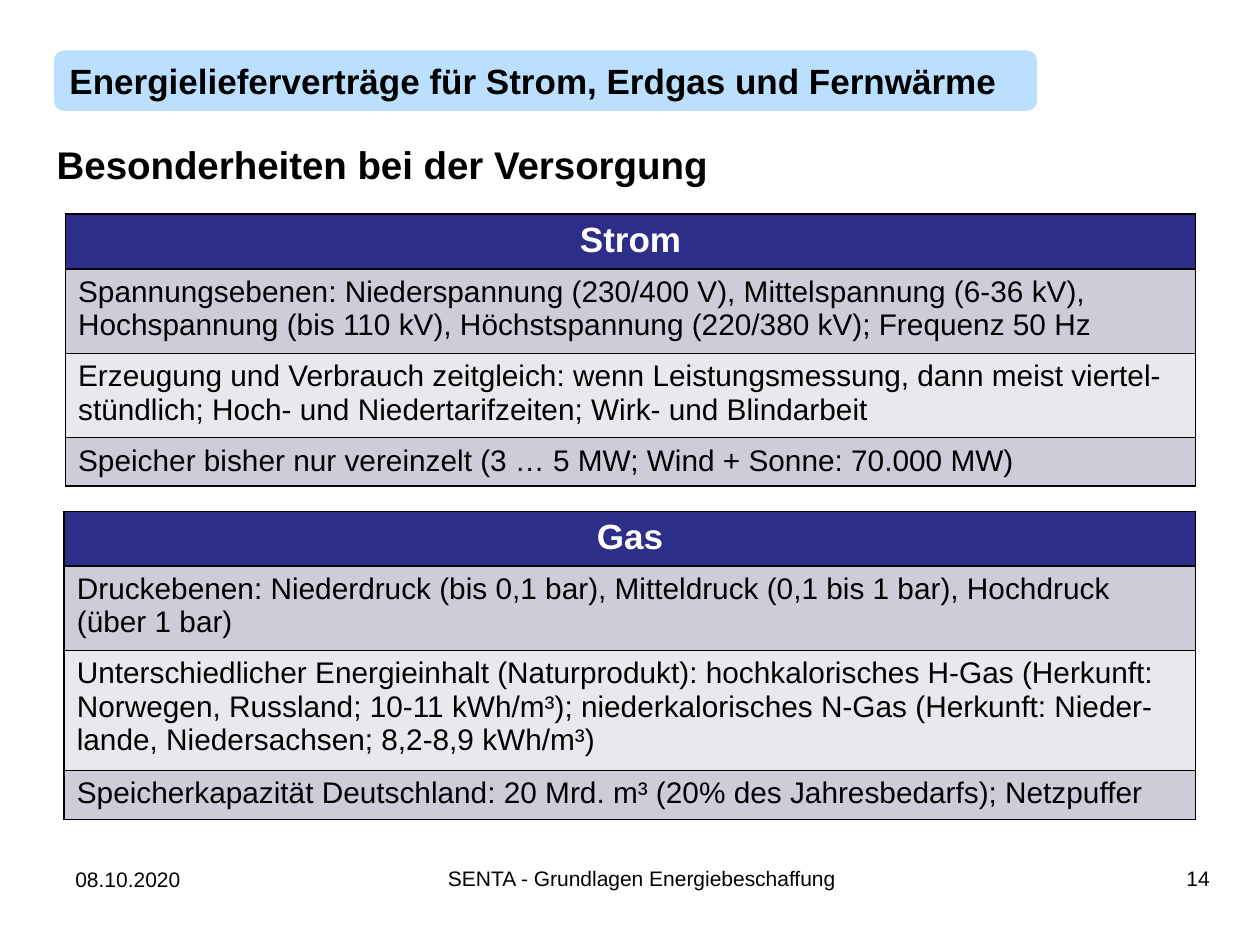
from dataclasses import dataclass

from lxml import etree
from pptx import Presentation
from pptx import util as u
from pptx.dml import color
from pptx.enum import shapes, text
from pptx.oxml import ns

FONT = "Arial"
BLACK, WHITE = "000000", "FFFFFF"
HEADER_FILL = "2D2D8A"
BAND_FILLS = ("CDCDDA", "E8E8ED")
LEFT, CENTER, RIGHT = text.PP_ALIGN.LEFT, text.PP_ALIGN.CENTER, text.PP_ALIGN.RIGHT


@dataclass
class Box:
    left: float
    top: float
    width: float
    height: float

    def lengths(self):
        return [u.Inches(v) for v in (self.left, self.top, self.width, self.height)]


@dataclass
class FooterItem:
    wording: str
    box: Box
    align: text.PP_ALIGN


@dataclass
class SupplyTable:
    heading: str
    facts: list[str]
    box: Box
    row_heights: list[float]


FOOTER = [
    FooterItem("08.10.2020", Box(0.5, 6.83, 1.2, 0.52), LEFT),
    FooterItem("SENTA - Grundlagen Energiebeschaffung", Box(1.77, 6.82, 6.65, 0.52), CENTER),
    FooterItem("14", Box(8.86, 6.82, 0.84, 0.52), RIGHT),
]

SUPPLIES = [
    SupplyTable(
        "Strom",
        [
            "Spannungsebenen: Niederspannung (230/400 V), Mittelspannung (6-36 kV), "
            "Hochspannung (bis 110 kV), Höchstspannung (220/380 kV); Frequenz 50 Hz",
            "Erzeugung und Verbrauch zeitgleich: wenn Leistungsmessung, dann meist "
            "viertel-stündlich; Hoch- und Niedertarifzeiten; Wirk- und Blindarbeit",
            "Speicher bisher nur vereinzelt (3 … 5 MW; Wind + Sonne: 70.000 MW)",
        ],
        Box(0.52, 1.7, 8.97, 2.15),
        [0.43, 0.67, 0.67, 0.38],
    ),
    SupplyTable(
        "Gas",
        [
            "Druckebenen: Niederdruck (bis 0,1 bar), Mitteldruck (0,1 bis 1 bar), "
            "Hochdruck (über 1 bar)",
            "Unterschiedlicher Energieinhalt (Naturprodukt): hochkalorisches H-Gas "
            "(Herkunft: Norwegen, Russland; 10-11 kWh/m³); niederkalorisches N-Gas "
            "(Herkunft: Nieder-lande, Niedersachsen; 8,2-8,9 kWh/m³)",
            "Speicherkapazität Deutschland: 20 Mrd. m³ (20% des Jahresbedarfs); Netzpuffer",
        ],
        Box(0.51, 4.06, 8.98, 2.44),
        [0.43, 0.67, 0.95, 0.39],
    ),
]


def rgb(value: str) -> color.RGBColor:
    return color.RGBColor.from_string(value)


def write(frame, wording: str, size: float, ink: str = BLACK, bold: bool = False,
          align: text.PP_ALIGN = LEFT) -> None:
    frame.word_wrap = True
    paragraph = frame.paragraphs[0]
    paragraph.alignment = align
    run = paragraph.add_run()
    run.text = wording
    run.font.name = FONT
    run.font.size = u.Pt(size)
    run.font.bold = bold
    run.font.color.rgb = rgb(ink)


def add_banner(slide, wording: str, box: Box) -> None:
    banner = slide.shapes.add_shape(shapes.MSO_SHAPE.ROUNDED_RECTANGLE, *box.lengths())
    banner.shadow.inherit = False
    banner.fill.solid()
    banner.fill.fore_color.rgb = rgb("058EFF")
    tint = banner.element.spPr.find(".//" + ns.qn("a:srgbClr"))
    etree.SubElement(tint, ns.qn("a:alpha"), val="27000")
    banner.line.fill.background()
    banner.text_frame.vertical_anchor = text.MSO_ANCHOR.MIDDLE
    write(banner.text_frame, wording, 20, bold=True)


def set_title(slide, wording: str, box: Box) -> None:
    title = slide.shapes.title
    title.left, title.top, title.width, title.height = box.lengths()
    title.text_frame.auto_size = text.MSO_AUTO_SIZE.NONE
    title.text_frame.vertical_anchor = text.MSO_ANCHOR.TOP
    write(title.text_frame, wording, 22, bold=True)


def add_footer_item(slide, item: FooterItem) -> None:
    frame = slide.shapes.add_textbox(*item.box.lengths()).text_frame
    write(frame, item.wording, 12, align=item.align)


def style_cell(cell, fill: str) -> None:
    cell.fill.solid()
    cell.fill.fore_color.rgb = rgb(fill)
    properties = cell._tc.get_or_add_tcPr()
    for position, side in enumerate(("a:lnL", "a:lnR", "a:lnT", "a:lnB")):
        border = etree.Element(ns.qn(side), w=str(u.Pt(1)))
        solid = etree.SubElement(border, ns.qn("a:solidFill"))
        etree.SubElement(solid, ns.qn("a:srgbClr"), val=BLACK)
        properties.insert(position, border)


def add_supply_table(slide, supply: SupplyTable) -> None:
    table = slide.shapes.add_table(len(supply.row_heights), 1, *supply.box.lengths()).table
    for row, height in zip(table.rows, supply.row_heights):
        row.height = u.Inches(height)
    header = table.cell(0, 0)
    style_cell(header, HEADER_FILL)
    write(header.text_frame, supply.heading, 20, WHITE, True, CENTER)
    for index, fact in enumerate(supply.facts):
        cell = table.cell(index + 1, 0)
        style_cell(cell, BAND_FILLS[index % 2])
        write(cell.text_frame, fact, 17)


def main() -> None:
    deck = Presentation()
    deck.slide_width, deck.slide_height = u.Inches(10), u.Inches(7.5)
    slide = deck.slides.add_slide(deck.slide_layouts[5])
    add_banner(slide, "Energielieferverträge für Strom, Erdgas und Fernwärme",
               Box(0.43, 0.4, 7.8, 0.48))
    set_title(slide, "Besonderheiten bei der Versorgung", Box(0.35, 1.07, 9.34, 0.47))
    for item in FOOTER:
        add_footer_item(slide, item)
    for supply in SUPPLIES:
        add_supply_table(slide, supply)
    deck.save("out.pptx")


if __name__ == "__main__":
    main()
